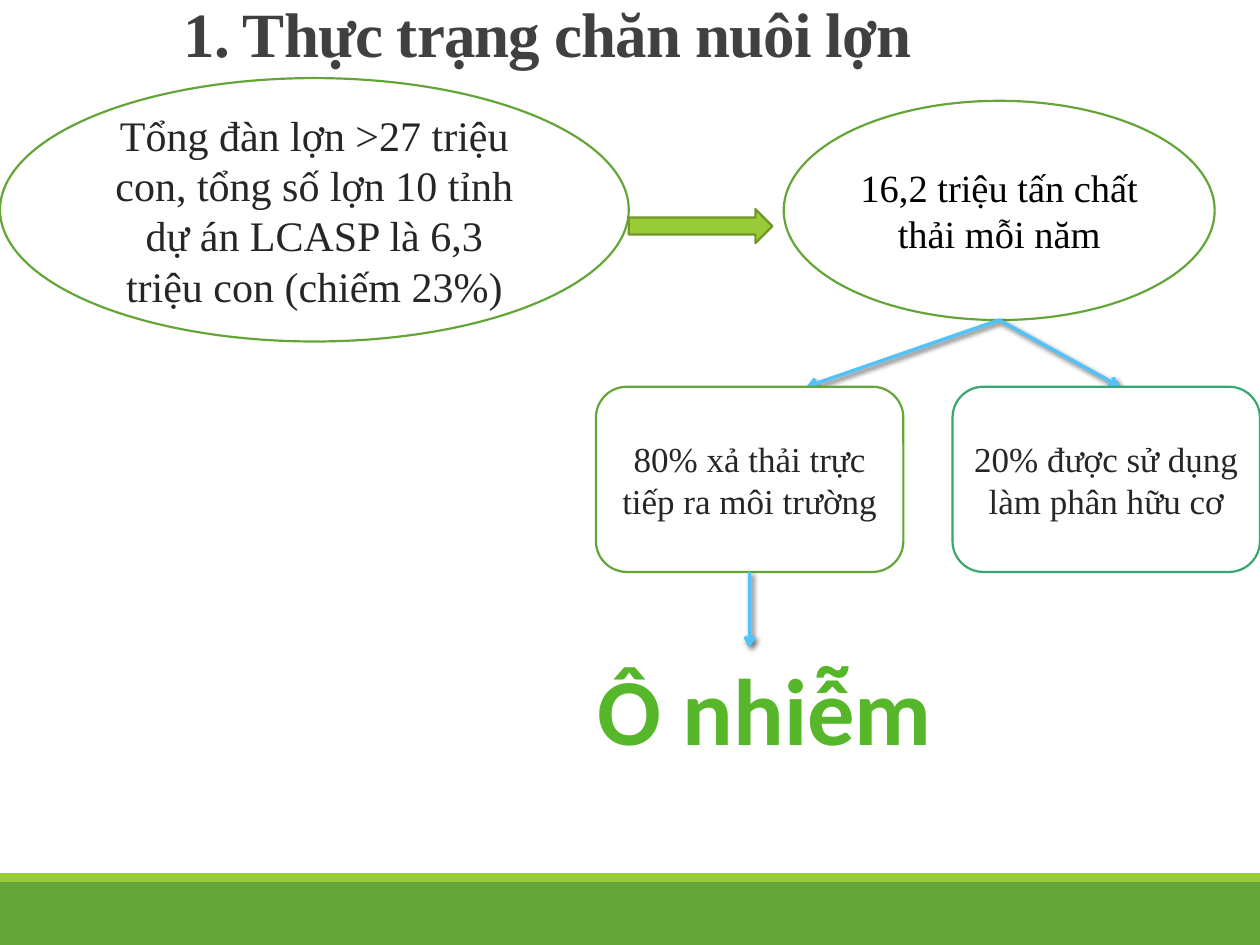
from dataclasses import dataclass

import lxml.etree
import pptx
import pptx.dml.color
import pptx.enum.shapes
import pptx.enum.text
import pptx.oxml
import pptx.oxml.ns
import pptx.util

SHAPE = pptx.enum.shapes.MSO_SHAPE
ANCHOR = pptx.enum.text.MSO_ANCHOR
SERIF = "Times New Roman"
GREEN, LIME, TEAL, OLIVE = "63A537", "99CB38", "37A76F", "719629"
WHITE, BLACK, INK, SKY = "FFFFFF", "000000", "262626", "51C3F9"
NS = 'xmlns:a="http://schemas.openxmlformats.org/drawingml/2006/main"'

deck = pptx.Presentation()
deck.slide_width = pptx.util.Inches(10)
deck.slide_height = pptx.util.Inches(7.5)
slide = deck.slides.add_slide(deck.slide_layouts[6])


@dataclass(frozen=True)
class Area:
    """A rectangle in percent of the slide's width and height."""
    left: float
    top: float
    width: float
    height: float

    def emu(self) -> tuple:
        return across(self.left), down(self.top), across(self.width), down(self.height)


@dataclass(frozen=True)
class Node:
    kind: int
    area: Area
    text: str
    size: int
    outline: str = GREEN
    ink: str = INK


def across(percent: float) -> int:
    return round(deck.slide_width * percent / 100)


def down(percent: float) -> int:
    return round(deck.slide_height * percent / 100)


def color(hex_value: str) -> pptx.dml.color.RGBColor:
    return pptx.dml.color.RGBColor.from_string(hex_value)


def write(frame, text: str, *, size: int, ink: str = INK, font: str = SERIF, bold: bool = False,
          spacing: float = 1, anchor=ANCHOR.MIDDLE, wrap: bool = True):
    frame.word_wrap = wrap
    frame.vertical_anchor = anchor
    paragraph = frame.paragraphs[0]
    paragraph.alignment = pptx.enum.text.PP_ALIGN.CENTER
    paragraph.line_spacing = spacing
    run = paragraph.add_run()
    run.text = text
    run.font.size = pptx.util.Pt(size)
    run.font.name = font
    run.font.bold = bold
    run.font.color.rgb = color(ink)
    return run


def add_block(kind: int, area: Area, fill: str, outline: str = ""):
    block = slide.shapes.add_shape(kind, *area.emu())
    block.shadow.inherit = False
    block.fill.solid()
    block.fill.fore_color.rgb = color(fill)
    if outline:
        block.line.color.rgb = color(outline)
        block.line.width = pptx.util.Pt(1.25)
    else:
        block.line.fill.background()
    return block


def add_node(node: Node):
    block = add_block(node.kind, node.area, WHITE, node.outline)
    write(block.text_frame, node.text, size=node.size, ink=node.ink)
    return block


def add_arrow(start: tuple[float, float], end: tuple[float, float]):
    """Draw a shadowed arrow between two points given in percent of the slide."""
    arrow = slide.shapes.add_connector(
        pptx.enum.shapes.MSO_CONNECTOR.STRAIGHT,
        across(start[0]), down(start[1]), across(end[0]), down(end[1]))
    arrow.line.color.rgb = color(SKY)
    arrow.line.width = pptx.util.Pt(2)
    line = arrow.line._get_or_add_ln()
    lxml.etree.SubElement(line, pptx.oxml.ns.qn("a:tailEnd"), type="arrow")
    arrow._element.spPr.append(pptx.oxml.parse_xml(
        f'<a:effectLst {NS}><a:outerShdw blurRad="38100" dist="25400" dir="2700000" rotWithShape="0">'
        f'<a:srgbClr val="{BLACK}"><a:alpha val="60000"/></a:srgbClr></a:outerShdw></a:effectLst>'))
    return arrow


def shade_text(run, stops: dict[int, str]) -> None:
    """Fill a run with a vertical gradient; stops map percent to colour."""
    marks = "".join(f'<a:gs pos="{percent * 1000}"><a:srgbClr val="{shade}"/></a:gs>'
                    for percent, shade in stops.items())
    run.font.fill.background()
    properties = run.font._element
    solid = properties.find(pptx.oxml.ns.qn("a:noFill"))
    properties.replace(solid, pptx.oxml.parse_xml(
        f'<a:gradFill {NS}><a:gsLst>{marks}</a:gsLst><a:lin ang="5400000" scaled="0"/></a:gradFill>'))


def main() -> None:
    add_block(SHAPE.RECTANGLE, Area(0, 93.33, 100, 6.67), GREEN)
    add_block(SHAPE.RECTANGLE, Area(0, 92.4, 100, 0.93), LIME)

    title = slide.shapes.add_textbox(*Area(0, 0, 86.9, 16.67).emu())
    heading = write(title.text_frame, "1. Thực trạng chăn nuôi lợn", size=36, ink="404040",
                    bold=True, spacing=0.85, anchor=ANCHOR.TOP)
    heading.font._element.set("spc", "-50")

    add_node(Node(SHAPE.OVAL, Area(0, 8.27, 49.9, 27.87),
                  "Tổng đàn lợn >27 triệu con, tổng số lợn 10 tỉnh dự án LCASP là 6,3 triệu con "
                  "(chiếm 23%)", 24))
    add_block(SHAPE.RIGHT_ARROW, Area(49.9, 22.13, 11.4, 3.6), LIME, OLIVE)
    add_node(Node(SHAPE.OVAL, Area(62.2, 10.67, 34.2, 23.2),
                  "16,2 triệu tấn chất thải mỗi năm", 22, ink=BLACK))

    box_top, box_width, box_height = 40.93, 24.4, 19.6
    for target in (64, 88.9):
        add_arrow((79.3, 33.87), (target, box_top))
    add_node(Node(SHAPE.ROUNDED_RECTANGLE, Area(75.6, box_top, box_width, box_height),
                  "20% được sử dụng làm phân hữu cơ", 20, outline=TEAL))
    discharge = add_node(Node(SHAPE.ROUNDED_RECTANGLE, Area(47.3, box_top, box_width, box_height),
                              "80% xả thải trực tiếp ra môi trường", 20))
    add_arrow((59.5, box_top + box_height), (59.5, 68.53)).begin_connect(discharge, 2)

    outcome = slide.shapes.add_textbox(*Area(46.3, 68.27, 28.8, 13.47).emu())
    pollution = write(outcome.text_frame, "Ô nhiễm", size=54, font="Calibri", bold=True,
                      anchor=ANCHOR.TOP, wrap=False)
    outcome.text_frame.auto_size = pptx.enum.text.MSO_AUTO_SIZE.SHAPE_TO_FIT_TEXT
    shade_text(pollution, {0: "9AE47D", 75: "57B72A", 100: "41A300"})

    deck.save("out.pptx")


if __name__ == "__main__":
    main()
